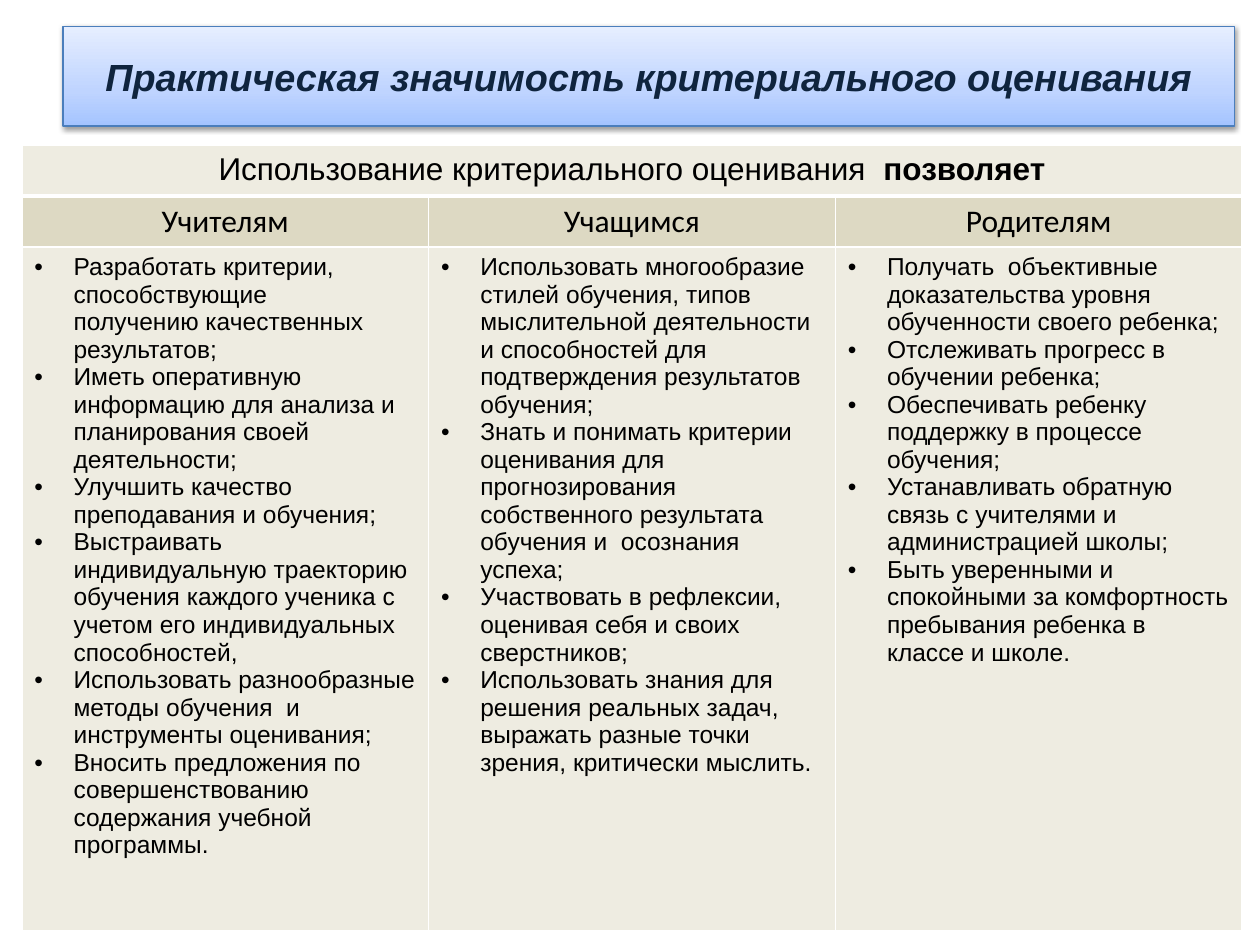
"""Build the slide on the practical value of criteria-based assessment."""
from dataclasses import dataclass

from lxml import etree
from pptx import Presentation
from pptx import util as u
from pptx.dml.color import RGBColor
from pptx.enum import text
from pptx.oxml import parse_xml
from pptx.oxml.ns import nsdecls, qn


@dataclass(frozen=True)
class Theme:
    ink: str = "000000"
    heading_ink: str = "0F243E"
    heading_line: str = "4B7EBC"
    heading_stops: tuple = ((0, "A4C4FF"), (35, "BFD4FF"), (100, "E6EEFF"))
    pale: str = "EEECE1"
    sand: str = "DDD9C3"
    rule: str = "FFFFFF"
    body_font: str = "Arial"
    audience_font: str = "Calibri"
    heading_size: float = 21.6
    header_size: float = 18
    body_size: float = 14


HEADING = "Практическая значимость критериального оценивания"
BANNER = (("Использование критериального оценивания  ", False), ("позволяет", True))
BENEFITS = {
    "Учителям": (
        "Разработать критерии, способствующие     получению качественных результатов;",
        "Иметь оперативную информацию для анализа и планирования своей деятельности;",
        "Улучшить качество преподавания и обучения;",
        "Выстраивать индивидуальную траекторию обучения каждого ученика с учетом его "
        "индивидуальных способностей,",
        "Использовать разнообразные методы обучения  и инструменты оценивания;",
        "Вносить предложения по совершенствованию содержания учебной программы.",
    ),
    "Учащимся": (
        "Использовать многообразие стилей обучения, типов мыслительной деятельности "
        "и способностей для подтверждения результатов обучения;",
        "Знать и понимать критерии оценивания для прогнозирования  собственного "
        "результата обучения и  осознания успеха;",
        "Участвовать в рефлексии, оценивая себя и своих сверстников;",
        "Использовать знания для решения реальных задач, выражать разные точки зрения, "
        "критически мыслить.",
    ),
    "Родителям": (
        "Получать  объективные доказательства уровня обученности своего ребенка;",
        "Отслеживать прогресс в обучении ребенка;",
        "Обеспечивать ребенку поддержку в процессе обучения;",
        "Устанавливать обратную связь с учителями и администрацией школы;",
        "Быть уверенными и спокойными за комфортность пребывания ребенка в классе и школе.",
    ),
}


class SlideBuilder:
    """Hold the theme and the current slide, and add its elements."""

    def __init__(self, slide, theme):
        self.slide = slide
        self.theme = theme

    def wording(self, paragraph, words, color=None, **formats):
        """Add a run with the given font formats."""
        run = paragraph.add_run()
        run.text = words
        base = {"name": self.theme.body_font, "bold": False, "italic": False}
        for key, value in (base | formats).items():
            setattr(run.font, key, value)
        run.font.color.rgb = RGBColor.from_string(color or self.theme.ink)

    def heading(self, words, left, top, width, height):
        """Place and format the title placeholder."""
        theme, heading = self.theme, self.slide.shapes.title
        box = {"left": left, "top": top, "width": width, "height": height}
        for key, value in box.items():
            setattr(heading, key, u.Cm(value))
        heading.fill.gradient()
        heading.fill.gradient_angle = 90
        stops = heading._element.spPr.find(".//" + qn("a:gsLst"))
        stops.clear()
        for position, color in theme.heading_stops:
            stop = etree.SubElement(stops, qn("a:gs"), pos=str(position * 1000))
            etree.SubElement(stop, qn("a:srgbClr"), val=color)
        heading.line.color.rgb = RGBColor.from_string(theme.heading_line)
        heading.line.width = u.Pt(0.75)
        heading._element.spPr.append(parse_xml(
            f'<a:effectLst {nsdecls("a")}><a:outerShdw blurRad="{u.Pt(3.1)}" '
            f'dist="{u.Pt(1.6)}" dir="5400000" rotWithShape="0"><a:srgbClr val="000000">'
            '<a:alpha val="38000"/></a:srgbClr></a:outerShdw></a:effectLst>'))
        frame = heading.text_frame
        frame.auto_size = text.MSO_AUTO_SIZE.NONE
        frame.vertical_anchor = text.MSO_ANCHOR.MIDDLE
        frame.paragraphs[0].alignment = text.PP_ALIGN.CENTER
        self.wording(frame.paragraphs[0], words, theme.heading_ink,
                     size=u.Pt(theme.heading_size), bold=True, italic=True)

    def cell(self, cell, fill, bottom=1):
        """Give a cell its borders and fill."""
        properties = cell._tc.get_or_add_tcPr()
        for side, width in {"L": 1, "R": 1, "T": 1, "B": bottom}.items():
            properties.append(parse_xml(
                f'<a:ln{side} {nsdecls("a")} w="{u.Pt(width)}"><a:solidFill>'
                f'<a:srgbClr val="{self.theme.rule}"/></a:solidFill></a:ln{side}>'))
        cell.fill.solid()
        cell.fill.fore_color.rgb = RGBColor.from_string(fill)

    def bullets(self, frame, items):
        """Fill a text frame with bulleted paragraphs."""
        for index, item in enumerate(items):
            paragraph = frame.add_paragraph() if index else frame.paragraphs[0]
            properties = paragraph._p.get_or_add_pPr()
            hang = u.Cm(0.79)
            for key, value in {"marL": hang, "indent": -hang}.items():
                properties.set(key, str(value))
            etree.SubElement(properties, qn("a:buFont"), typeface=self.theme.body_font)
            etree.SubElement(properties, qn("a:buChar"), char="•")
            self.wording(paragraph, item, size=u.Pt(self.theme.body_size))

    def benefits(self, banner, columns, left, top, column_width, row_heights):
        """Add the table with a banner row and one column per audience."""
        theme, count = self.theme, len(columns)
        table = self.slide.shapes.add_table(
            len(row_heights), count, u.Cm(left), u.Cm(top),
            u.Cm(column_width * count), u.Cm(sum(row_heights))).table
        for key in ("first_row", "horz_banding"):
            setattr(table, key, False)
        for column in table.columns:
            column.width = u.Cm(column_width)
        for row, height in zip(table.rows, row_heights):
            row.height = u.Cm(height)
        header_size = u.Pt(theme.header_size)
        table.cell(0, 0).merge(table.cell(0, count - 1))
        line = table.cell(0, 0).text_frame.paragraphs[0]
        line.alignment = text.PP_ALIGN.CENTER
        for words, bold in banner:
            self.wording(line, words, size=header_size, bold=bold)
        for index, (audience, items) in enumerate(columns.items()):
            self.cell(table.cell(0, index), theme.pale, bottom=3)
            self.cell(table.cell(1, index), theme.sand)
            self.cell(table.cell(2, index), theme.pale)
            line = table.cell(1, index).text_frame.paragraphs[0]
            line.alignment = text.PP_ALIGN.CENTER
            self.wording(line, audience, size=header_size, name=theme.audience_font)
            self.bullets(table.cell(2, index).text_frame, items)


def main():
    """Build and save the presentation."""
    deck = Presentation()
    deck.slide_width, deck.slide_height = u.Cm(25.4), u.Cm(19.05)
    title_only = deck.slide_layouts.get_by_name("Title Only")
    builder = SlideBuilder(deck.slides.add_slide(title_only), Theme())
    builder.heading(HEADING, 1.27, 0.53, 23.62, 2.01)
    builder.benefits(BANNER, BENEFITS, 0.44, 2.93, 8.2, (1.02, 1.02, 13.79))
    deck.save("out.pptx")


if __name__ == "__main__":
    main()
